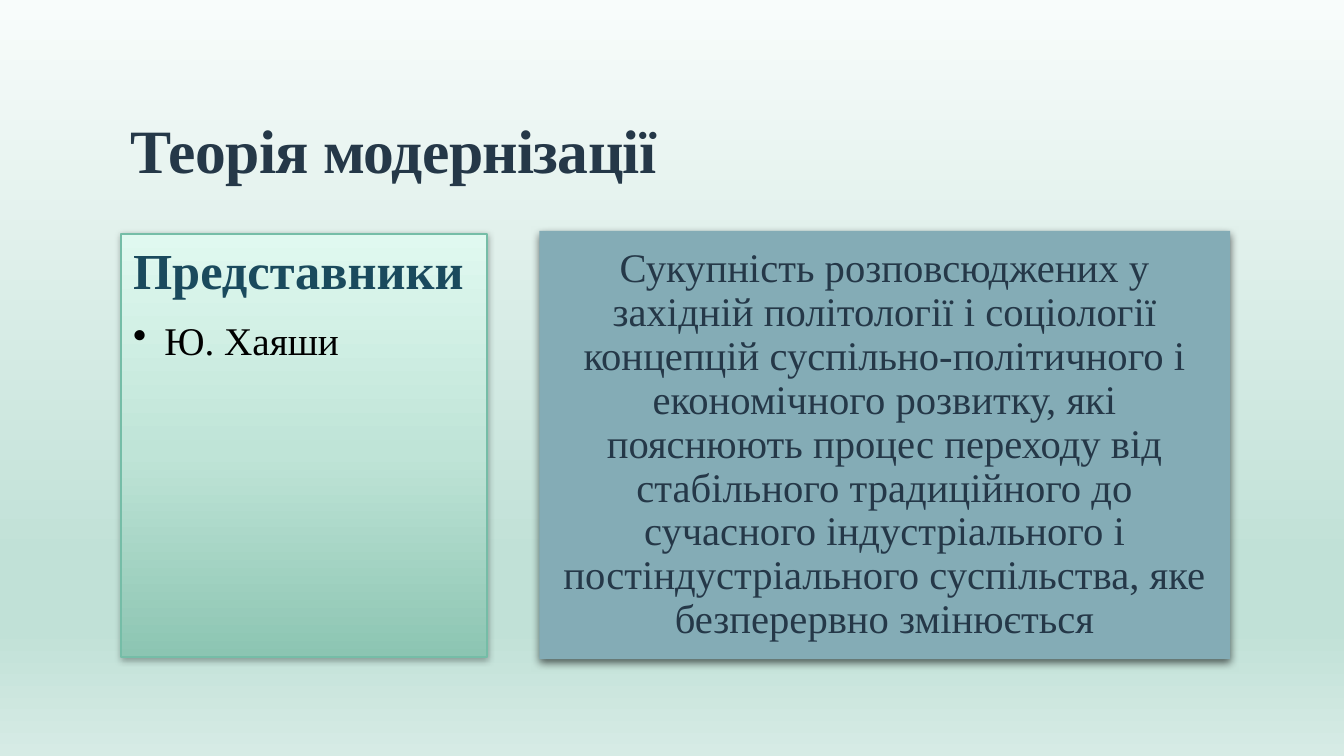
from lxml import etree
from pptx import Presentation
from pptx.dml.color import RGBColor
from pptx.enum.shapes import MSO_SHAPE
from pptx.enum.text import MSO_ANCHOR, PP_ALIGN
from pptx.oxml import parse_xml
from pptx.oxml.ns import nsdecls, qn
from pptx.util import Inches, Pt

RECT = MSO_SHAPE.RECTANGLE
TOP, MIDDLE, BOTTOM = MSO_ANCHOR.TOP, MSO_ANCHOR.MIDDLE, MSO_ANCHOR.BOTTOM
LEFT, CENTER = PP_ALIGN.LEFT, PP_ALIGN.CENTER

# Content
TITLE = "Теорія модернізації"
HEADING = "Представники"
PEOPLE = ["Ю. Хаяши"]
DEFINITION = (
    "Сукупність розповсюджених у західній політології і соціології "
    "концепцій суспільно-політичного і економічного розвитку, які "
    "пояснюють процес переходу від стабільного традиційного до сучасного "
    "індустріального і постіндустріального суспільства, яке безперервно "
    "змінюється"
)

# Style
FONT = "Times New Roman"
COLORS = {
    "dark": "253848",
    "heading": "1A4A5D",
    "black": "000000",
    "border": "75BDA7",
    "panel": "84ACB6",
}
BACKGROUND = [(0, "F8FCFB"), (74, "C1E1D7"), (83, "C1E1D7"), (100, "D6EBE5")]
PEOPLE_FILL = [(0, "8CC5B2"), (48, "BFE4D7"), (100, "E0F9F0")]
INSET = 0.12
INDENT = 0.31

# Boxes: left, top, width, height
TITLE_BOX = (1.2, 0.31, 11, 1.59)
PEOPLE_BOX = (1.2, 2.32, 3.63, 4.2)
DEFINITION_BOX = (5.35, 2.29, 6.85, 4.25)


def rgb(name):
    return RGBColor.from_string(COLORS[name])


def set_gradient(fill, parent, stops, angle):
    fill.gradient()
    old = parent.xpath(".//a:gradFill")[0]
    marks = "".join(
        f'<a:gs pos="{pos * 1000}"><a:srgbClr val="{color}"/></a:gs>'
        for pos, color in stops
    )
    new = parse_xml(
        f'<a:gradFill {nsdecls("a")} rotWithShape="1"><a:gsLst>{marks}</a:gsLst>'
        f'<a:lin ang="{angle * 60000}" scaled="0"/></a:gradFill>'
    )
    old.getparent().replace(old, new)


def add_panel(s, box, alpha, blur, dist):
    sp = s.shapes.add_shape(RECT, *map(Inches, box))
    sp.shadow.inherit = False
    effects = sp._element.spPr.find(qn("a:effectLst"))
    effects.append(parse_xml(
        f'<a:outerShdw {nsdecls("a")} blurRad="{Pt(blur)}" dist="{Pt(dist)}" '
        f'dir="5400000" algn="ctr" rotWithShape="0">'
        f'<a:srgbClr val="{COLORS["black"]}"><a:alpha val="{alpha * 1000}"/>'
        f'</a:srgbClr></a:outerShdw>'
    ))
    return sp


def set_frame(tf, anchor, inset=None):
    tf.word_wrap = True
    tf.vertical_anchor = anchor
    if inset is not None:
        tf.margin_left = tf.margin_right = Inches(inset)
        tf.margin_top = tf.margin_bottom = Inches(inset)


def write(p, text, size, color, bold=False, align=LEFT, spacing=0.9, after=0):
    p.alignment = align
    p.line_spacing = spacing
    p.space_after = Pt(after)
    r = p.add_run()
    r.text = text
    r.font.name = FONT
    r.font.size = Pt(size)
    r.font.bold = bold
    r.font.color.rgb = rgb(color)
    return r


def add_bullet(p):
    pPr = p._p.get_or_add_pPr()
    pPr.set("marL", str(Inches(INDENT)))
    pPr.set("indent", str(-Inches(INDENT)))
    etree.SubElement(pPr, qn("a:buChar")).set("char", "•")


prs = Presentation()
prs.slide_width, prs.slide_height = Inches(13.33), Inches(7.5)
s = prs.slides.add_slide(prs.slide_layouts[6])
set_gradient(s.background.fill, s._element, BACKGROUND, 90)

# Title
tf = s.shapes.add_textbox(*map(Inches, TITLE_BOX)).text_frame
set_frame(tf, BOTTOM)
r = write(tf.paragraphs[0], TITLE, 44, "dark", bold=True, spacing=0.85)
r.font._element.set("spc", "-50")

# Representatives panel
sp = add_panel(s, PEOPLE_BOX, alpha=32, blur=5, dist=1)
set_gradient(sp.fill, sp._element, PEOPLE_FILL, 270)
sp.line.color.rgb = rgb("border")
sp.line.width = Pt(1)
tf = sp.text_frame
set_frame(tf, TOP, INSET)
write(tf.paragraphs[0], HEADING, 36, "heading", bold=True, after=15)
for person in PEOPLE:
    p = tf.add_paragraph()
    write(p, person, 28, "black", after=6)
    add_bullet(p)

# Definition panel
sp = add_panel(s, DEFINITION_BOX, alpha=60, blur=6, dist=3)
sp.fill.solid()
sp.fill.fore_color.rgb = rgb("panel")
sp.line.fill.background()
tf = sp.text_frame
set_frame(tf, MIDDLE, INSET)
write(tf.paragraphs[0], DEFINITION, 29, "dark", align=CENTER, after=8)

prs.save("out.pptx")
